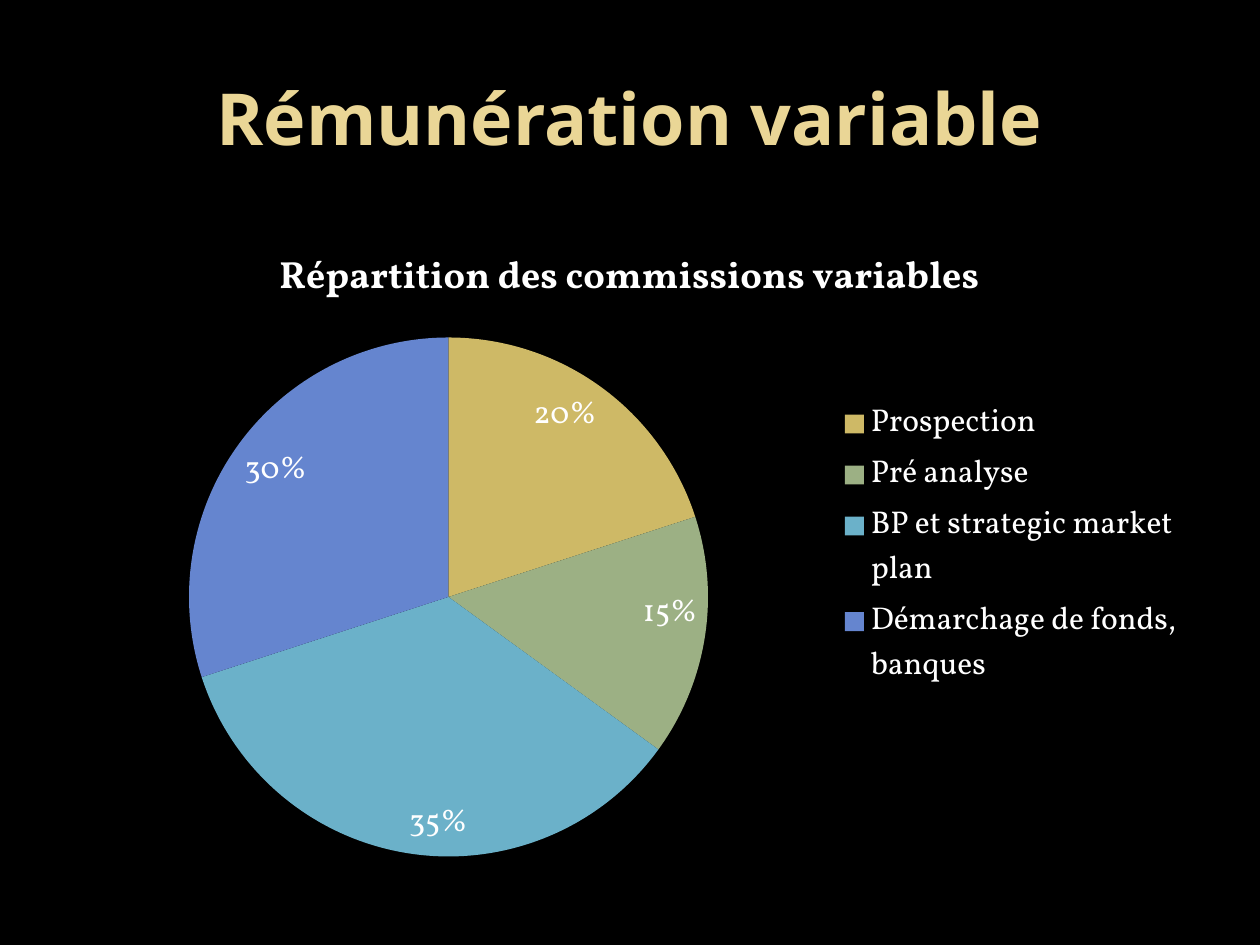
"""Build a slide showing how variable commissions are split."""
from lxml.etree import SubElement as Sub
from pptx import Presentation
from pptx.chart.data import CategoryChartData as Data
from pptx.dml.color import RGBColor as RGB
from pptx.enum.chart import XL_CHART_TYPE as Kind
from pptx.enum.chart import XL_LABEL_POSITION as Spot
from pptx.enum.chart import XL_LEGEND_POSITION as Side
from pptx.enum.text import MSO_ANCHOR as Anchor
from pptx.enum.text import PP_ALIGN as Align
from pptx.oxml.ns import qn
from pptx.util import Cm, Pt

TITLE = "Rémunération variable"
HEAD = "Répartition des commissions variables"
PARTS = [
    ("Prospection", 0.20, "CEB966"),
    ("Pré analyse", 0.15, "9CB084"),
    ("BP et strategic market plan", 0.35, "6BB1C9"),
    ("Démarchage de fonds, banques", 0.30, "6585CF"),
]
THEME = {
    "back": "000000", "gold": "EAD696", "text": "FFFFFF",
    "sans": "Open Sans", "serif": "Vollkorn",
    "title": 41, "head": 21.6, "body": 18,
}
SIZE = (25.4, 19.05)
EDGE = 1.27
WIDE = SIZE[0] - 2 * EDGE
TOP = (EDGE, 0.76, WIDE, 3.18)
AREA = (EDGE, 4.45, WIDE, 13.08)
PLOT = {"x": 0.11, "y": 0.18, "w": 0.46, "h": 0.8}


def style(font, face, size, tint, bold=False):
    font.name, font.size, font.bold = THEME[face], Pt(THEME[size]), bold
    font.color.rgb = RGB.from_string(THEME[tint])


def add_title(slide):
    box = slide.shapes.title
    box.left, box.top, box.width, box.height = map(Cm, TOP)
    box.text_frame.vertical_anchor = Anchor.MIDDLE
    para = box.text_frame.paragraphs[0]
    para.alignment = Align.CENTER
    run = para.add_run()
    run.text = TITLE
    style(run.font, "sans", "title", "gold", True)


def set_plot(chart):
    area = chart.element.find(".//" + qn("c:plotArea"))
    old = area.find(qn("c:layout"))
    if old is not None:
        area.remove(old)
    node = Sub(area, qn("c:layout"))
    area.insert(0, node)
    node = Sub(node, qn("c:manualLayout"))
    rules = {"layoutTarget": "inner", "xMode": "edge", "yMode": "edge", **PLOT}
    for key, val in rules.items():
        Sub(node, qn("c:" + key)).set("val", str(val))


def add_pie(slide):
    data = Data(number_format="0%")
    data.categories = [name for name, _, _ in PARTS]
    data.add_series(HEAD, [val for _, val, _ in PARTS])
    chart = slide.shapes.add_chart(Kind.PIE, *map(Cm, AREA), data).chart
    style(chart.font, "serif", "body", "text")
    chart.has_title = True
    run = chart.chart_title.text_frame.paragraphs[0].add_run()
    run.text = HEAD
    style(run.font, "serif", "head", "text", True)
    chart.has_legend = True
    chart.legend.position = Side.RIGHT
    chart.legend.include_in_layout = False
    style(chart.legend.font, "serif", "body", "text")
    plot = chart.plots[0]
    plot.vary_by_categories = True
    for i, (_, _, tint) in enumerate(PARTS):
        fill = plot.series[0].points[i].format.fill
        fill.solid()
        fill.fore_color.rgb = RGB.from_string(tint)
    plot.has_data_labels = True
    tags = plot.data_labels
    tags.show_value, tags.show_percentage = True, False
    tags.number_format, tags.number_format_is_linked = "0%", False
    tags.position = Spot.INSIDE_END
    style(tags.font, "serif", "body", "text")
    set_plot(chart)


def main():
    deck = Presentation()
    deck.slide_width, deck.slide_height = map(Cm, SIZE)
    slide = deck.slides.add_slide(deck.slide_layouts[5])
    fill = slide.background.fill
    fill.solid()
    fill.fore_color.rgb = RGB.from_string(THEME["back"])
    add_title(slide)
    add_pie(slide)
    deck.save("out.pptx")


if __name__ == "__main__":
    main()
